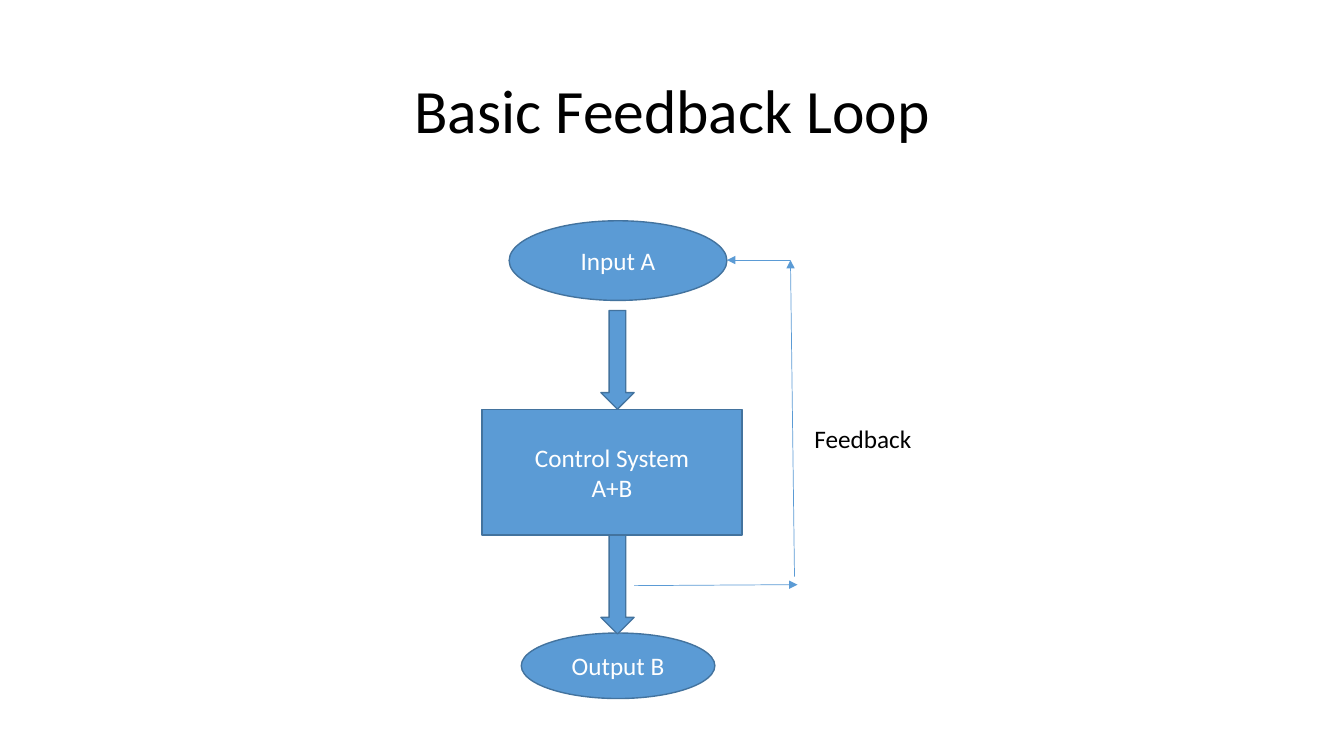
from lxml.etree import SubElement
from pptx import Presentation
from pptx.dml.color import RGBColor
from pptx.enum.shapes import MSO_CONNECTOR, MSO_SHAPE
from pptx.enum.text import MSO_ANCHOR, MSO_AUTO_SIZE, PP_ALIGN
from pptx.oxml.ns import qn
from pptx.util import Inches, Pt

TITLE = "Basic Feedback Loop"
FONT = "Calibri"
BLUE, OUTLINE, BLACK, WHITE = "5B9BD5", "43739E", "000000", "FFFFFF"

# kind, left, top, width, height, lines of text
STAGES = [
    (MSO_SHAPE.OVAL, 5.05, 2.19, 2.16, 0.79, ["Input A"]),
    (MSO_SHAPE.RECTANGLE, 4.78, 4.06, 2.58, 1.25, ["Control System", "A+B"]),
    (MSO_SHAPE.OVAL, 5.17, 6.28, 1.92, 0.65, ["Output B"]),
]
FLOW_LEFT, FLOW_WIDTH, FLOW_HEIGHT = 5.96, 0.33, 0.98
FLOW_TOPS = [5.31, 3.08]
FEEDBACK_LABEL = ("Feedback", 7.98, 4.15, 1.17, 0.4)
FEEDBACK_PATH = [
    ((6.29, 5.81), (7.91, 5.8)),
    ((7.88, 5.72), (7.84, 2.58)),
    ((7.84, 2.58), (7.21, 2.58)),
]


def color(value):
    return RGBColor.from_string(value)


def write(frame, lines, size, text_color, alignment):
    frame.text = "\n".join(lines)
    for paragraph in frame.paragraphs:
        paragraph.alignment = alignment
        paragraph.font.name = FONT
        paragraph.font.size = Pt(size)
        paragraph.font.color.rgb = color(text_color)


def add_block(slide, kind, left, top, width, height, lines=()):
    """Add a blue outlined shape with optional centred white text."""
    shape = slide.shapes.add_shape(
        kind, Inches(left), Inches(top), Inches(width), Inches(height))
    shape.shadow.inherit = False
    shape.fill.solid()
    shape.fill.fore_color.rgb = color(BLUE)
    shape.line.color.rgb = color(OUTLINE)
    shape.line.width = Pt(1)
    if lines:
        shape.text_frame.vertical_anchor = MSO_ANCHOR.MIDDLE
        write(shape.text_frame, lines, 18, WHITE, PP_ALIGN.CENTER)


def add_arrow(slide, start, end):
    points = [Inches(value) for value in start + end]
    connector = slide.shapes.add_connector(MSO_CONNECTOR.STRAIGHT, *points)
    connector.line.color.rgb = color(BLUE)
    connector.line.width = Pt(0.5)
    SubElement(connector.line._get_or_add_ln(), qn("a:tailEnd"), type="triangle")
    SubElement(connector._element.spPr, qn("a:effectLst"))


def main():
    presentation = Presentation()
    presentation.slide_width = Inches(13.33)
    presentation.slide_height = Inches(7.5)
    slide = presentation.slides.add_slide(presentation.slide_layouts[5])

    title = slide.shapes.title
    title.left, title.top = Inches(0.92), Inches(0.4)
    title.width, title.height = Inches(11.5), Inches(1.45)
    title.text_frame.vertical_anchor = MSO_ANCHOR.MIDDLE
    write(title.text_frame, [TITLE], 44, BLACK, PP_ALIGN.CENTER)
    title.text_frame.paragraphs[0].line_spacing = 0.9

    for stage in STAGES:
        add_block(slide, *stage)
    for top in FLOW_TOPS:
        add_block(slide, MSO_SHAPE.DOWN_ARROW, FLOW_LEFT, top, FLOW_WIDTH, FLOW_HEIGHT)
    for start, end in FEEDBACK_PATH:
        add_arrow(slide, start, end)

    text, *box = FEEDBACK_LABEL
    label = slide.shapes.add_textbox(*[Inches(value) for value in box])
    label.text_frame.word_wrap = False
    label.text_frame.auto_size = MSO_AUTO_SIZE.SHAPE_TO_FIT_TEXT
    write(label.text_frame, [text], 18, BLACK, PP_ALIGN.LEFT)

    presentation.save("out.pptx")


if __name__ == "__main__":
    main()
